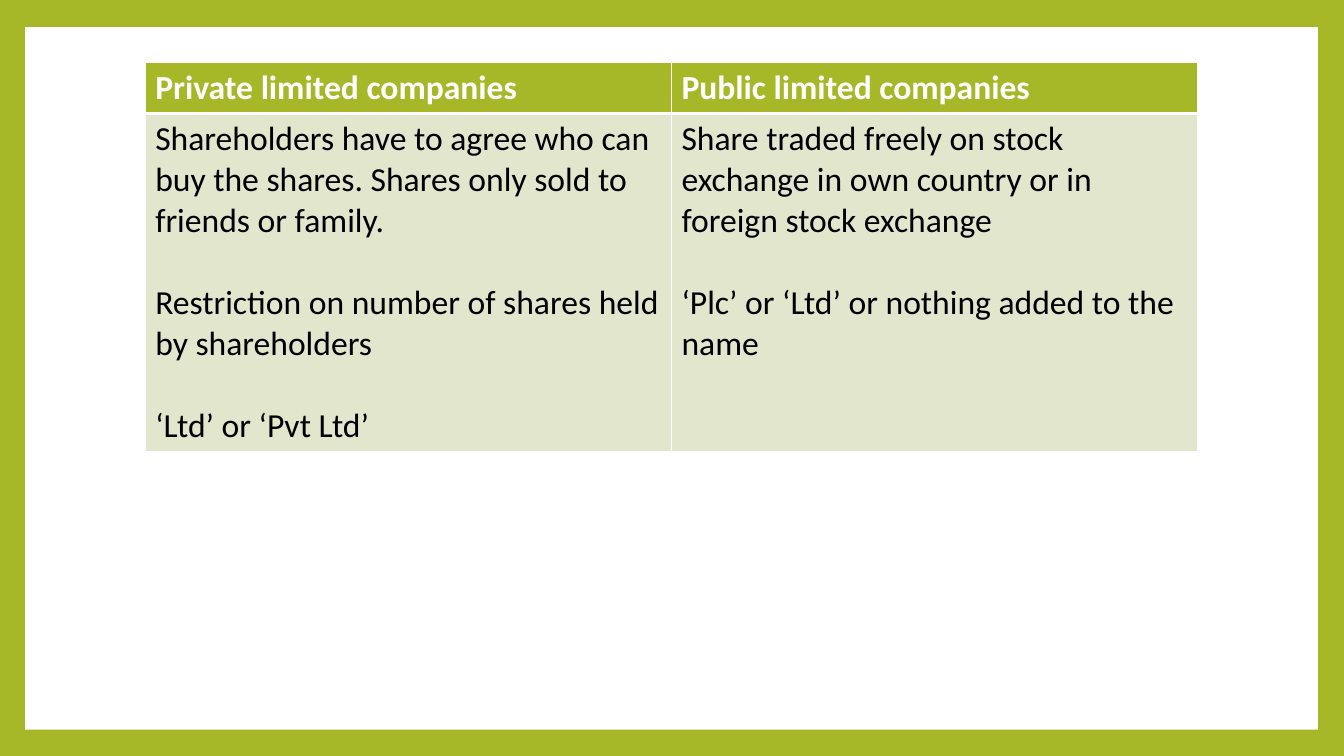
from dataclasses import dataclass

from lxml import etree
from pptx import Presentation
from pptx.dml.color import RGBColor
from pptx.enum.shapes import MSO_SHAPE
from pptx.oxml.ns import qn
from pptx.util import Inches, Pt

RECTANGLE = MSO_SHAPE.RECTANGLE

COMPANY_TYPES = {
    "Private limited companies": [
        "Shareholders have to agree who can buy the shares. "
        "Shares only sold to friends or family.",
        "Restriction on number of shares held by shareholders",
        "‘Ltd’ or ‘Pvt Ltd’",
    ],
    "Public limited companies": [
        "Share traded freely on stock exchange in own country "
        "or in foreign stock exchange",
        "‘Plc’ or ‘Ltd’ or nothing added to the name",
    ],
}


@dataclass(frozen=True)
class Theme:
    green: str = "A6B727"
    pale: str = "E1E6CD"
    white: str = "FFFFFF"
    black: str = "000000"
    font: str = "Calibri"
    text_size: float = 24
    paragraph_gap: float = 29.3
    thin: float = 1
    thick: float = 3


THEME = Theme()
SLIDE_SIZE = (13.33, 7.5)
PANEL = (0.25, 0.27, 12.82, 6.97)
TABLE_LEFT, TABLE_TOP, COLUMN_WIDTH = 1.44, 0.62, 5.22
ROW_HEIGHTS = (0.5, 3.35)


def paint(fill, color):
    fill.solid()
    fill.fore_color.rgb = RGBColor.from_string(color)


def set_borders(cell, top, bottom):
    """Draw white cell borders, which the schema wants ahead of the fill."""
    properties = cell._tc.get_or_add_tcPr()
    widths = {"lnL": THEME.thin, "lnR": THEME.thin, "lnT": top, "lnB": bottom}
    for index, (tag, width) in enumerate(widths.items()):
        line = etree.Element(qn(f"a:{tag}"), w=str(Pt(width)))
        solid = etree.SubElement(line, qn("a:solidFill"))
        etree.SubElement(solid, qn("a:srgbClr"), val=THEME.white)
        properties.insert(index, line)


def write_cell(cell, texts, fill, color, bold):
    paint(cell.fill, fill)
    frame = cell.text_frame
    font_format = {"name": THEME.font, "size": Pt(THEME.text_size), "bold": bold}
    for index, text in enumerate(texts):
        paragraph = frame.add_paragraph() if index else frame.paragraphs[0]
        if index:
            paragraph.space_before = Pt(THEME.paragraph_gap)
        run = paragraph.add_run()
        run.text = text
        for name, value in font_format.items():
            setattr(run.font, name, value)
        run.font.color.rgb = RGBColor.from_string(color)


def add_company_table(slide):
    columns = len(COMPANY_TYPES)
    area = (TABLE_LEFT, TABLE_TOP, columns * COLUMN_WIDTH, sum(ROW_HEIGHTS))
    table = slide.shapes.add_table(
        len(ROW_HEIGHTS), columns, *map(Inches, area)).table
    for row, height in zip(table.rows, ROW_HEIGHTS):
        row.height = Inches(height)
    for index, (heading, points) in enumerate(COMPANY_TYPES.items()):
        table.columns[index].width = Inches(COLUMN_WIDTH)
        header, body = table.cell(0, index), table.cell(1, index)
        write_cell(header, [heading], THEME.green, THEME.white, True)
        write_cell(body, points, THEME.pale, THEME.black, False)
        set_borders(header, THEME.thin, THEME.thick)
        set_borders(body, THEME.thick, THEME.thin)


def main():
    presentation = Presentation()
    presentation.slide_width, presentation.slide_height = map(Inches, SLIDE_SIZE)
    slide = presentation.slides.add_slide(presentation.slide_layouts[6])
    paint(slide.background.fill, THEME.green)
    panel = slide.shapes.add_shape(RECTANGLE, *map(Inches, PANEL))
    panel.shadow.inherit = False
    paint(panel.fill, THEME.white)
    panel.line.fill.background()
    add_company_table(slide)
    presentation.save("out.pptx")


if __name__ == "__main__":
    main()
